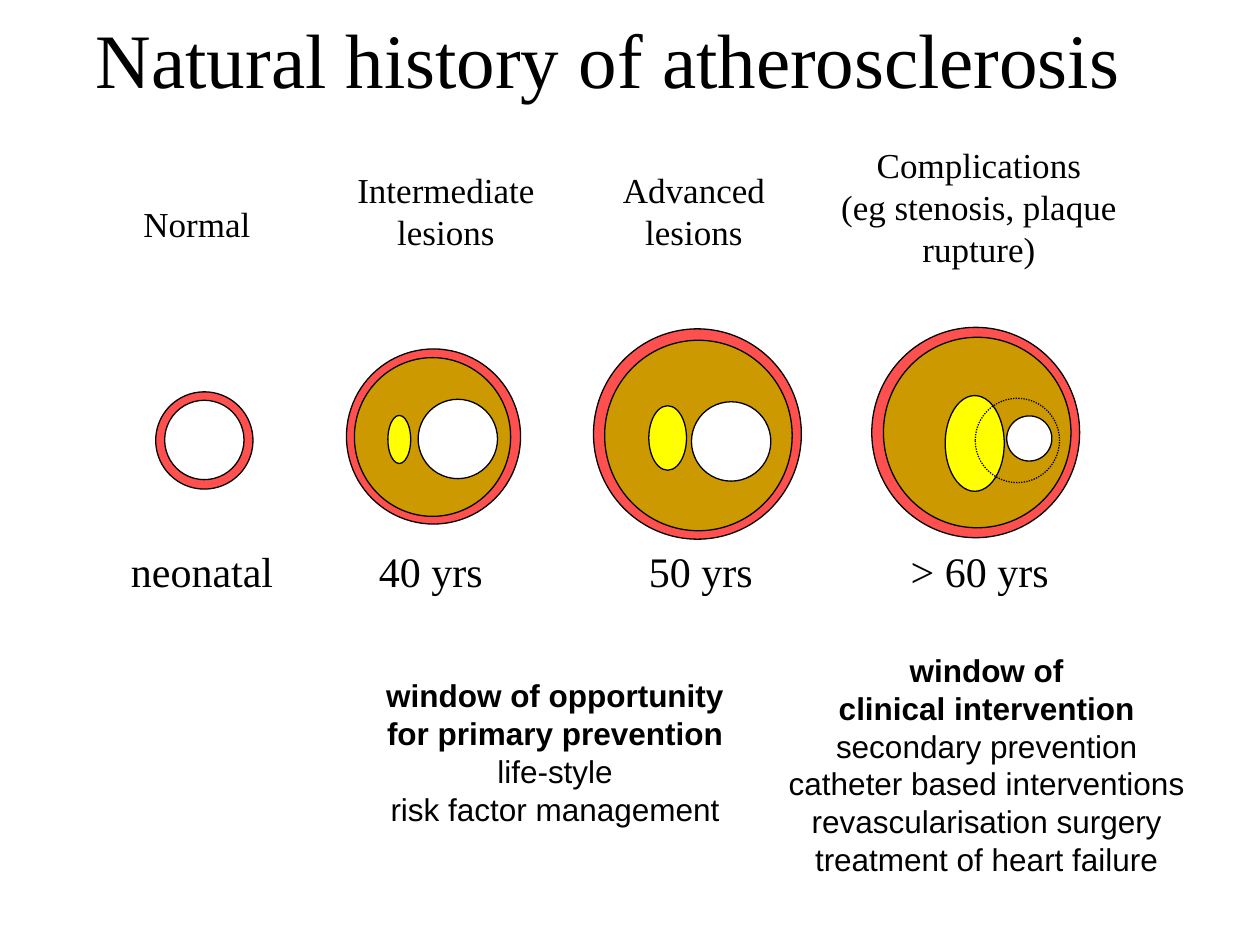
"""Build the slide on the natural history of atherosclerosis."""
from pptx import Presentation
from pptx.dml.color import RGBColor
from pptx.enum.dml import MSO_LINE
from pptx.enum.shapes import MSO_SHAPE
from pptx.enum.text import MSO_ANCHOR, PP_ALIGN
from pptx.util import Cm, Pt

OVAL = MSO_SHAPE.OVAL
DOTS = MSO_LINE.ROUND_DOT
LEFT, MID = PP_ALIGN.LEFT, PP_ALIGN.CENTER
TOP, MIDDLE = MSO_ANCHOR.TOP, MSO_ANCHOR.MIDDLE
SERIF, SANS = "Times New Roman", "Arial"
BLACK, WHITE = "000000", "FFFFFF"
WALL, PLAQUE, CORE = "FF5050", "CC9900", "FFFF00"

TITLE = "Natural history of atherosclerosis"
HEADS = [
    (["Normal"], (2.64, 3.96, 2.67, 1.09), LEFT, False),
    (["Intermediate lesions"], (6.35, 3.28, 5.28, 1.96), MID, True),
    (["Advanced lesions"], (11.35, 3.28, 5.28, 1.96), MID, True),
    (["Complications", "(eg stenosis, plaque rupture)"],
     (16.56, 2.77, 6.35, 2.79), MID, True),
]
AGES = [("neonatal", 2.39), ("40 yrs", 7.39), ("50 yrs", 12.83),
        ("> 60 yrs", 18.11)]
AGE_TOP, AGE_WIDE, AGE_HIGH = 10.87, 3.81, 1.27
GOALS = [
    (["window of opportunity", "for primary prevention", "life-style",
      "risk factor management"], (7.09, 13.51, 8.2, 4.06), True),
    (["window of", "clinical intervention", "secondary prevention",
      "catheter based interventions", "revascularisation surgery",
      "treatment of heart failure"], (15.65, 13, 8.48, 4.83), False),
]
VESSELS = {
    "normal": [(4.12, 8.88, 1.96, 1.96, WALL), (4.12, 8.87, 1.6, 1.6, WHITE)],
    "intermediate": [
        (8.74, 8.8, 3.51, 3.53, WALL), (8.72, 8.81, 3.15, 3.2, PLAQUE),
        (9.23, 8.85, 1.6, 1.6, WHITE), (8.05, 8.86, 0.46, 0.97, CORE)],
    "advanced": [
        (14.06, 8.75, 4.19, 4.24, WALL), (14.08, 8.78, 3.78, 3.84, PLAQUE),
        (14.74, 8.9, 1.6, 1.6, WHITE), (13.46, 8.83, 0.76, 1.3, CORE)],
    "complicated": [
        (19.67, 8.72, 4.19, 4.24, WALL), (19.7, 8.72, 3.78, 3.84, PLAQUE),
        (19.65, 8.94, 1.19, 1.93, CORE), (20.75, 8.84, 0.91, 0.91, WHITE),
        (20.51, 8.88, 1.7, 1.7, None)],
}


def paint(code):
    return RGBColor.from_string(code)


def write(slide, lines, box, size=20, font=SERIF, align=MID, wrap=True,
          anchor=TOP, bold=0):
    frame = slide.shapes.add_textbox(*map(Cm, box)).text_frame
    frame.word_wrap = wrap
    frame.vertical_anchor = anchor
    for i, line in enumerate(lines):
        para = frame.paragraphs[0] if i == 0 else frame.add_paragraph()
        para.alignment = align
        run = para.add_run()
        run.text = line
        run.font.name = font
        run.font.size = Pt(size)
        run.font.bold = i < bold
        run.font.color.rgb = paint(BLACK)


def ring(slide, x, y, wide, high, fill):
    oval = slide.shapes.add_shape(
        OVAL, Cm(x - wide / 2), Cm(y - high / 2), Cm(wide), Cm(high))
    oval.shadow.inherit = False
    oval.line.color.rgb = paint(BLACK)
    oval.line.width = Pt(0.75)
    if fill:
        oval.fill.solid()
        oval.fill.fore_color.rgb = paint(fill)
    else:
        oval.fill.background()
        oval.line.dash_style = DOTS


def main():
    deck = Presentation()
    deck.slide_width, deck.slide_height = Cm(25.4), Cm(19.05)
    slide = deck.slides.add_slide(deck.slide_layouts[6])
    write(slide, [TITLE], (1.47, -0.43, 21.59, 3.18), size=44, anchor=MIDDLE)
    for lines, box, align, wrap in HEADS:
        write(slide, lines, box, align=align, wrap=wrap)
    for rings in VESSELS.values():
        for part in rings:
            ring(slide, *part)
    for age, x in AGES:
        write(slide, [age], (x, AGE_TOP, AGE_WIDE, AGE_HIGH), size=24,
              align=LEFT)
    for lines, box, wrap in GOALS:
        write(slide, lines, box, size=18, font=SANS, wrap=wrap, bold=2)
    deck.save("out.pptx")


if __name__ == "__main__":
    main()
